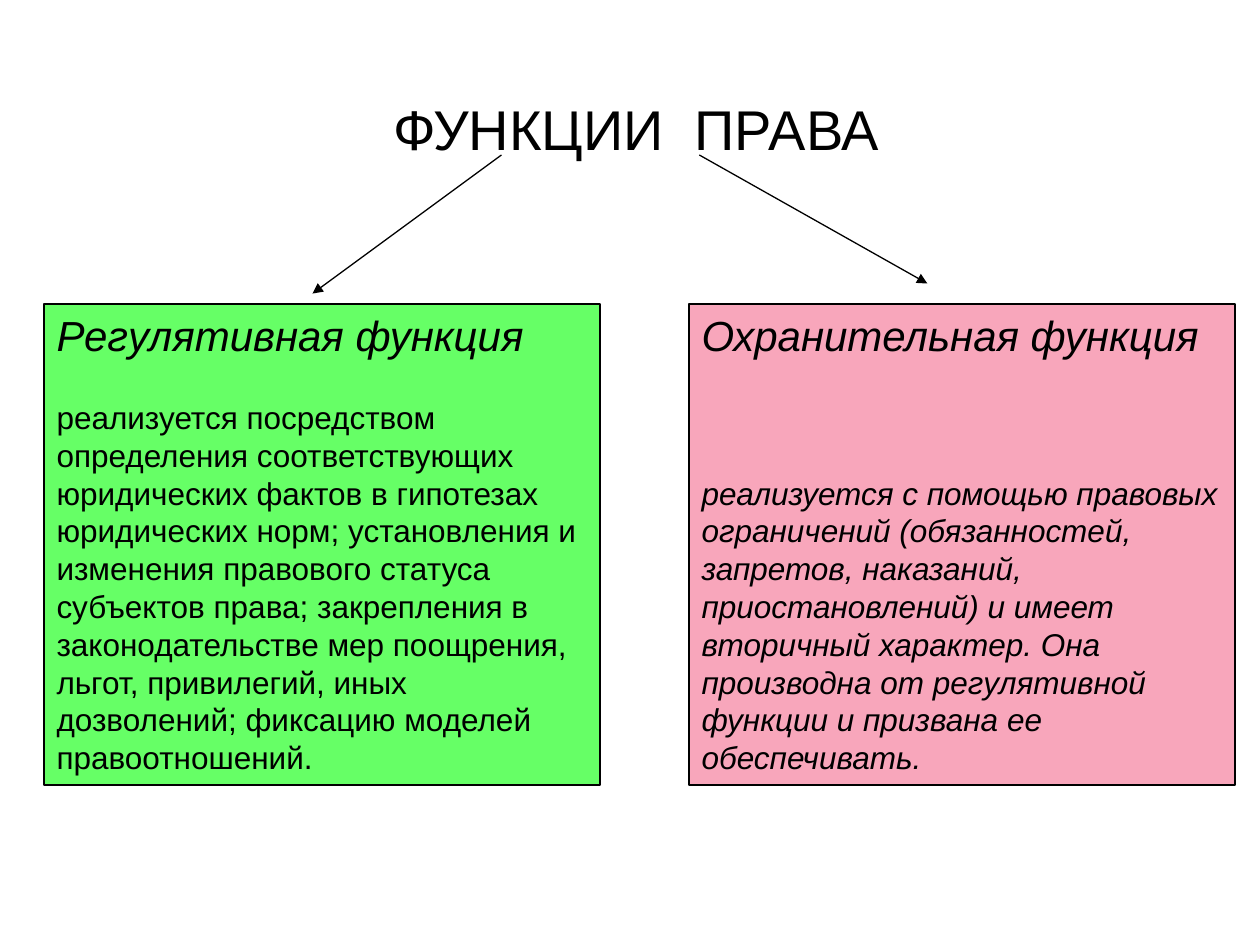
from lxml import etree
from pptx import Presentation
from pptx.dml.color import RGBColor
from pptx.enum.shapes import MSO_CONNECTOR, MSO_SHAPE
from pptx.enum.text import MSO_ANCHOR, MSO_AUTO_SIZE, PP_ALIGN
from pptx.oxml.ns import qn
from pptx.util import Inches, Pt

STRAIGHT = MSO_CONNECTOR.STRAIGHT
RECTANGLE = MSO_SHAPE.RECTANGLE
TOP = MSO_ANCHOR.TOP
GROW = MSO_AUTO_SIZE.SHAPE_TO_FIT_TEXT
LEFT, CENTER = PP_ALIGN.LEFT, PP_ALIGN.CENTER

BLACK = RGBColor(0x00, 0x00, 0x00)
GREEN = RGBColor(0x66, 0xFF, 0x66)
PINK = RGBColor(0xF8, 0xA6, 0xBB)
FONT = "Arial"

REGULATORY = (
    "реализуется посредством определения соответствующих юридических фактов "
    "в гипотезах юридических норм; установления и изменения правового статуса "
    "субъектов права; закрепления в законодательстве мер поощрения, льгот, "
    "привилегий, иных дозволений; фиксацию моделей правоотношений."
)
PROTECTIVE = (
    "реализуется с помощью правовых ограничений (обязанностей, запретов, "
    "наказаний, приостановлений) и имеет вторичный характер. Она производна "
    "от регулятивной функции и призвана ее обеспечивать."
)


def format_paragraph(p, text, size, align, italic=False):
    p.text = text
    p.alignment = align
    p.font.name = FONT
    p.font.size = Pt(size)
    p.font.italic = italic
    p.font.color.rgb = BLACK


def add_heading(slide, left, top, width, height):
    body = slide.placeholders[1]
    body.left, body.top = Inches(left), Inches(top)
    body.width, body.height = Inches(width), Inches(height)
    p = body.text_frame.paragraphs[0]
    format_paragraph(p, "ФУНКЦИИ  ПРАВА", 32, CENTER)
    etree.SubElement(p._p.get_or_add_pPr(), qn("a:buNone"))


def add_function_box(slide, left, top, width, height, fill, name, text, gap, italic):
    """Add a filled box with a function's name and, gap points below, its text."""
    box = slide.shapes.add_shape(
        RECTANGLE, Inches(left), Inches(top), Inches(width), Inches(height))
    box.shadow.inherit = False
    box.fill.solid()
    box.fill.fore_color.rgb = fill
    box.line.color.rgb = BLACK
    box.line.width = Pt(1)
    tf = box.text_frame
    tf.word_wrap = True
    tf.auto_size = GROW
    tf.vertical_anchor = TOP
    format_paragraph(tf.paragraphs[0], name, 24, LEFT, italic=True)
    p = tf.add_paragraph()
    format_paragraph(p, text, 18, LEFT, italic)
    p.space_before = Pt(gap)


def add_arrow(slide, x1, y1, x2, y2):
    arrow = slide.shapes.add_connector(
        STRAIGHT, Inches(x1), Inches(y1), Inches(x2), Inches(y2))
    arrow.line.color.rgb = BLACK
    arrow.line.width = Pt(0.75)
    etree.SubElement(arrow.line._get_or_add_ln(), qn("a:tailEnd"), type="triangle")
    etree.SubElement(arrow._element.spPr, qn("a:effectLst"))


def main():
    prs = Presentation()
    prs.slide_width, prs.slide_height = Inches(10), Inches(7.5)
    slide = prs.slides.add_slide(prs.slide_layouts[1])
    title = slide.shapes.title._element
    title.getparent().remove(title)

    add_heading(slide, 0.55, 0.7, 9, 6.1)
    box_top, box_height = 2.41, 3.82
    add_function_box(slide, 0.35, box_top, 4.41, box_height, GREEN,
                     "Регулятивная функция", REGULATORY, gap=21.6, italic=False)
    add_function_box(slide, 5.47, box_top, 4.33, box_height, PINK,
                     "Охранительная функция", PROTECTIVE, gap=64.8, italic=True)
    add_arrow(slide, 3.98, 1.23, 2.48, 2.33)
    add_arrow(slide, 5.55, 1.23, 7.36, 2.25)
    prs.save("out.pptx")


if __name__ == "__main__":
    main()
